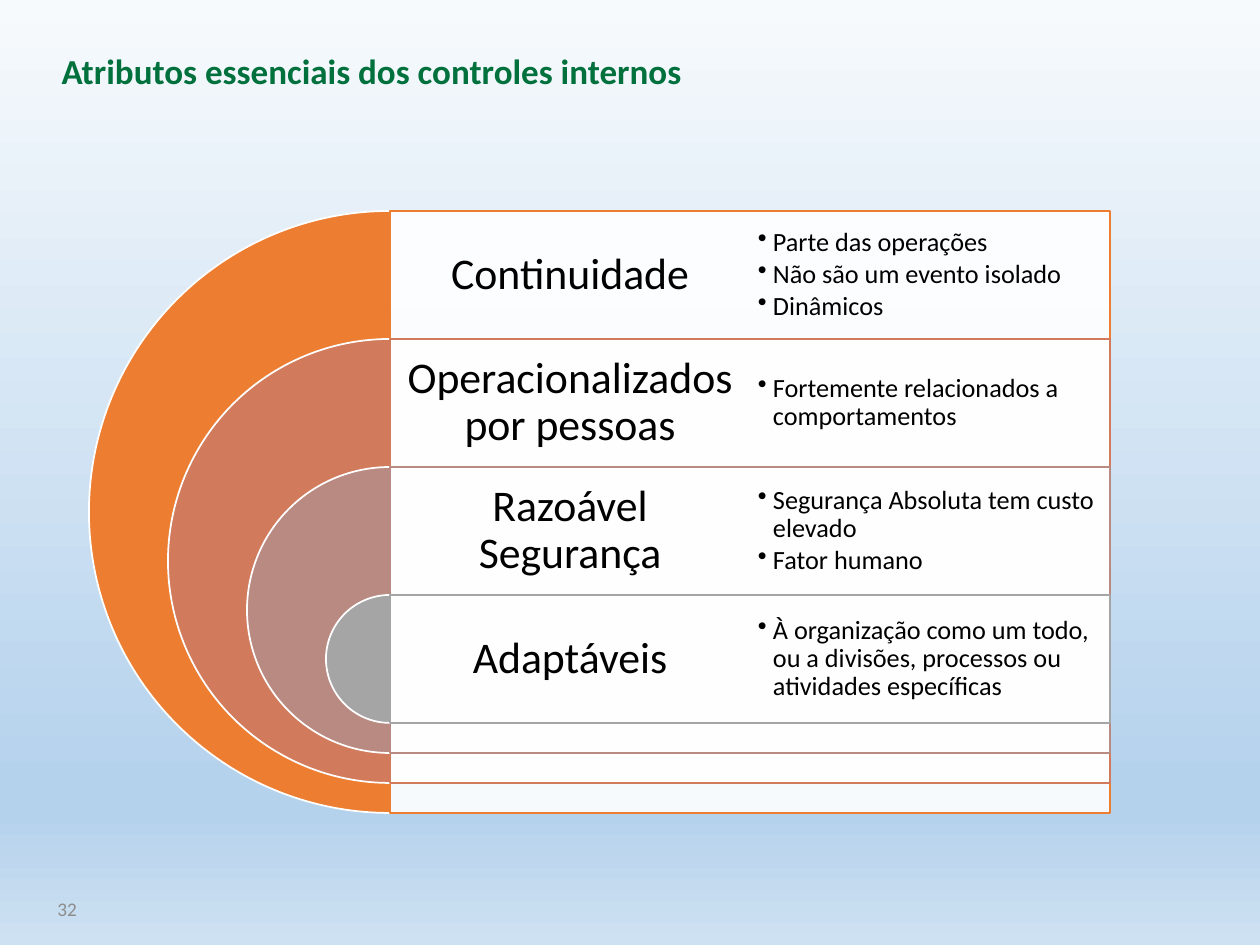
from lxml.etree import SubElement
from pptx import Presentation
from pptx.dml.color import RGBColor
from pptx.enum.shapes import MSO_SHAPE as Shape
from pptx.enum.text import MSO_ANCHOR as Anchor, MSO_AUTO_SIZE as AutoSize, PP_ALIGN as Align
from pptx.oxml.ns import qn
from pptx.util import Emu, Pt

FONT = "Calibri"
SKY = [(0, "F7FAFD"), (83, "B5D2EC"), (86, "B5D2EC"), (100, "CEE1F2")]
ATTRIBUTES = [
    ("Continuidade", "ED7D31",
     ["Parte das operações", "Não são um evento isolado", "Dinâmicos"]),
    ("Operacionalizados por pessoas", "D17B5C",
     ["Fortemente relacionados a comportamentos"]),
    ("Razoável Segurança", "B98A82",
     ["Segurança Absoluta tem custo elevado", "Fator humano"]),
    ("Adaptáveis", "A5A5A5",
     ["À organização como um todo, ou a divisões, processos ou atividades específicas"]),
]


def px(length):
    return Emu(round(length * 914400 / 126))


def color(hex_value):
    return RGBColor.from_string(hex_value)


def paint_background(page):
    fill = page.background.fill
    fill.gradient()
    fill.gradient_angle = 270
    stops = page.background._cSld.find(".//" + qn("a:gsLst"))
    for stop in list(stops):
        stops.remove(stop)
    for percent, hex_value in SKY:
        stop = SubElement(stops, qn("a:gs"), pos=str(percent * 1000))
        SubElement(stop, qn("a:srgbClr"), val=hex_value)


def write_lines(frame, lines, size, hex_value, align, bold=False):
    frame.text = "\n".join(lines)
    frame.word_wrap = True
    for para in frame.paragraphs:
        para.alignment = align
        for span in para.runs:
            span.font.name = FONT
            span.font.size = Pt(size)
            span.font.bold = bold
            span.font.color.rgb = color(hex_value)


def add_text(page, box, lines, size, hex_value, align, inset):
    frame = page.shapes.add_textbox(*map(px, box)).text_frame
    write_lines(frame, lines, size, hex_value, align)
    frame.vertical_anchor = Anchor.MIDDLE
    frame.margin_left = frame.margin_right = px(inset)
    frame.margin_top = frame.margin_bottom = px(inset)
    for para in frame.paragraphs:
        para.line_spacing = 0.9
    return frame


def add_bullets(frame, indent):
    for para in frame.paragraphs:
        para.space_after = Pt(2)
        props = para._p.get_or_add_pPr()
        props.set("marL", str(px(indent)))
        props.set("indent", str(-px(indent)))
        SubElement(props, qn("a:buChar"), char="•")


def add_panel(page, kind, box, fill, line, alpha=None):
    shape = page.shapes.add_shape(kind, *map(px, box))
    shape.shadow.inherit = False
    shape.fill.solid()
    shape.fill.fore_color.rgb = color(fill)
    shape.line.color.rgb = color(line)
    shape.line.width = Pt(1)
    if alpha is not None:
        fill_color = shape._element.spPr.find(qn("a:solidFill"))[0]
        SubElement(fill_color, qn("a:alpha"), val=str(alpha * 1000))
    return shape


def add_title(page, box):
    title = page.shapes.title
    title.left, title.top, title.width, title.height = map(px, box)
    write_lines(title.text_frame, ["Atributos essenciais dos controles internos"],
                20, "00703C", Align.LEFT, bold=True)
    title.text_frame.vertical_anchor = Anchor.TOP
    title.text_frame.auto_size = AutoSize.NONE


def add_nested_targets(page, box):
    """Half discs nested along the left, each with a panel to its right."""
    left, top, width, height = box
    row, shrink = 128, 158
    center = left + height // 2
    panel_width = left + width - center
    column = panel_width // 2
    for index, (name, hue, points) in enumerate(ATTRIBUTES):
        y = top + index * row
        size = height - index * shrink
        # Half disc
        pie = add_panel(page, Shape.PIE, (center - size / 2, y, size, size), hue, "FFFFFF")
        pie.adjustments[0], pie.adjustments[1] = 54, 162
        # Panel with name and bullet columns
        add_panel(page, Shape.RECTANGLE, (center, y, panel_width, size), "FFFFFF", hue, 90)
        add_text(page, (center, y, column, row), [name], 25, "000000", Align.CENTER, 12)
        frame = add_text(page, (center + column, y, column, row), points,
                         15, "000000", Align.LEFT, 8)
        add_bullets(frame, 15)


def main():
    deck = Presentation()
    deck.slide_width, deck.slide_height = px(1260), px(945)
    page = deck.slides.add_slide(deck.slide_layouts[5])
    paint_background(page)
    add_title(page, (49, 43, 900, 55))
    add_nested_targets(page, (89, 211, 1021, 602))
    # Slide number
    add_text(page, (26, 894, 63, 32), ["32"], 11, "8C8C8C", Align.RIGHT, 12)
    deck.save("out.pptx")


if __name__ == "__main__":
    main()
